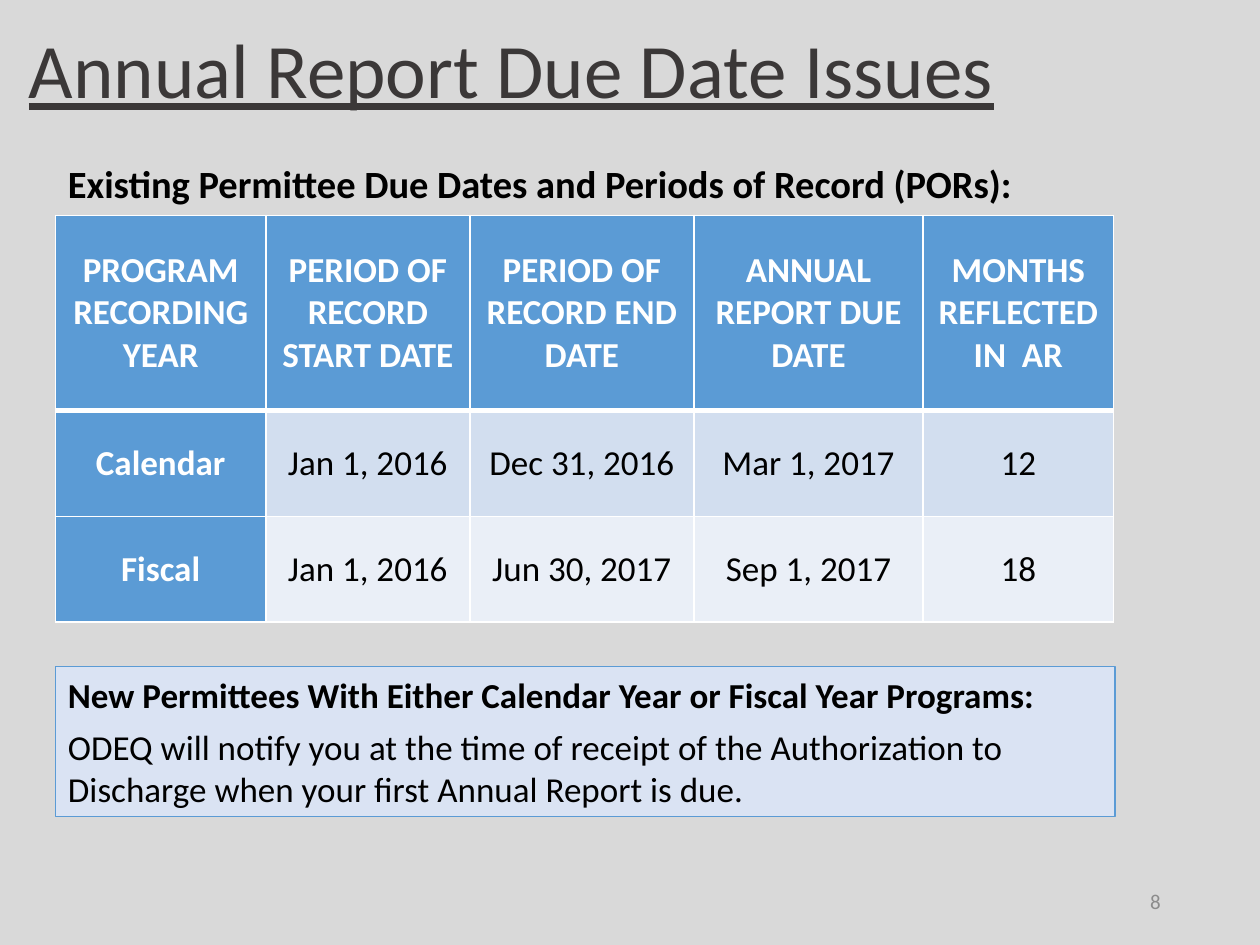
from lxml import etree
from pptx import Presentation
from pptx.dml.color import RGBColor
from pptx.enum.shapes import MSO_SHAPE
from pptx.enum.text import MSO_ANCHOR, MSO_AUTO_SIZE, PP_ALIGN
from pptx.oxml.ns import qn
from pptx.util import Cm, Pt

LEFT, CENTER, RIGHT = PP_ALIGN.LEFT, PP_ALIGN.CENTER, PP_ALIGN.RIGHT
MIDDLE = MSO_ANCHOR.MIDDLE
NO_AUTOFIT = MSO_AUTO_SIZE.NONE
RECTANGLE = MSO_SHAPE.RECTANGLE

FONT = "Calibri"
BLACK, WHITE, BLUE = "000000", "FFFFFF", "5B9BD5"
BODY_FILLS = ["D2DEEF", "EAEFF7"]
MARGIN, CONTENT_WIDTH = 1.12, 21.36
COLUMN_WIDTHS = [4.24, 4.11, 4.52, 4.62, 3.84]
ROW_HEIGHTS = [3.94, 2.13, 2.13]
DUE_DATES = [
    ["PROGRAM RECORDING YEAR", "PERIOD OF RECORD START DATE",
     "PERIOD OF RECORD END DATE", "ANNUAL REPORT DUE DATE",
     "MONTHS REFLECTED IN  AR"],
    ["Calendar", "Jan 1, 2016", "Dec 31, 2016", "Mar 1, 2017", "12"],
    ["Fiscal", "Jan 1, 2016", "Jun 30, 2017", "Sep 1, 2017", "18"],
]


def color(hex_code):
    return RGBColor.from_string(hex_code)


def fill_solid(fill, hex_code):
    fill.solid()
    fill.fore_color.rgb = color(hex_code)


def write_paragraph(paragraph, text, size, hex_code=BLACK, bold=False, align=LEFT):
    paragraph.text = text
    paragraph.alignment = align
    for run in paragraph.runs:
        run.font.name = FONT
        run.font.size = Pt(size)
        run.font.bold = bold
        run.font.color.rgb = color(hex_code)


def prepare_frame(shape):
    text_frame = shape.text_frame
    text_frame.word_wrap = True
    text_frame.auto_size = NO_AUTOFIT
    text_frame.vertical_anchor = MIDDLE
    return text_frame


def format_title(title, text):
    title.left, title.top = Cm(0.33), Cm(0.43)
    title.width, title.height = Cm(24.82), Cm(2.11)
    paragraph = prepare_frame(title).paragraphs[0]
    write_paragraph(paragraph, text, 44, "3B3838")
    paragraph.line_spacing = 0.9
    paragraph.runs[0].font.underline = True


def add_label(slide, left, top, width, height, text, size, **style):
    label = slide.shapes.add_textbox(Cm(left), Cm(top), Cm(width), Cm(height))
    write_paragraph(prepare_frame(label).paragraphs[0], text, size, **style)


def set_borders(cell, **widths):
    properties = cell._tc.get_or_add_tcPr()
    for side in "LRTB":
        width = Pt(widths.get(side, 1))
        line = etree.SubElement(properties, qn(f"a:ln{side}"), w=str(width))
        solid = etree.SubElement(line, qn("a:solidFill"))
        etree.SubElement(solid, qn("a:srgbClr"), val=WHITE)


def format_cell(cell, text, row, column):
    is_heading = row == 0 or column == 0
    cell.margin_left = cell.margin_right = Cm(0.18)
    cell.margin_top = cell.margin_bottom = 0
    cell.vertical_anchor = MIDDLE
    write_paragraph(cell.text_frame.paragraphs[0], text, 20,
                    WHITE if is_heading else BLACK, is_heading, CENTER)
    set_borders(cell, T=3 if row == 1 else 1, B=3 if row == 0 else 1)
    fill_solid(cell.fill, BLUE if is_heading else BODY_FILLS[row - 1])


def add_due_date_table(slide):
    table = slide.shapes.add_table(
        len(ROW_HEIGHTS), len(COLUMN_WIDTHS), Cm(MARGIN), Cm(4.34),
        Cm(CONTENT_WIDTH), Cm(sum(ROW_HEIGHTS))).table
    for column, width in zip(table.columns, COLUMN_WIDTHS):
        column.width = Cm(width)
    for row, height in zip(table.rows, ROW_HEIGHTS):
        row.height = Cm(height)
    for row_index, texts in enumerate(DUE_DATES):
        for column_index, text in enumerate(texts):
            format_cell(table.cell(row_index, column_index), text, row_index, column_index)


def add_note_box(slide, heading, body):
    box = slide.shapes.add_shape(
        RECTANGLE, Cm(MARGIN), Cm(13.44), Cm(CONTENT_WIDTH), Cm(3.02))
    box.shadow.inherit = False
    fill_solid(box.fill, "DAE3F3")
    box.line.color.rgb = color(BLUE)
    box.line.width = Pt(0.75)
    text_frame = prepare_frame(box)
    write_paragraph(text_frame.paragraphs[0], heading, 20, bold=True)
    paragraph = text_frame.add_paragraph()
    write_paragraph(paragraph, body, 20)
    paragraph.space_before = Pt(6)


def main():
    presentation = Presentation()
    presentation.slide_width, presentation.slide_height = Cm(25.4), Cm(19.05)
    slide = presentation.slides.add_slide(
        presentation.slide_layouts.get_by_name("Title Only"))
    fill_solid(slide.background.fill, "D9D9D9")
    format_title(slide.shapes.title, "Annual Report Due Date Issues")
    add_label(slide, 17.93, 17.65, 5.72, 1.02, "8", 12, hex_code="8C8C8C", align=RIGHT)
    add_due_date_table(slide)
    add_note_box(
        slide, "New Permittees With Either Calendar Year or Fiscal Year Programs:",
        "ODEQ will notify you at the time of receipt of the Authorization to "
        "Discharge when your first Annual Report is due.")
    add_label(slide, MARGIN, 3.1, 19.89, 1.19,
              "Existing Permittee Due Dates and Periods of Record (PORs):", 22, bold=True)
    presentation.save("out.pptx")


if __name__ == "__main__":
    main()
